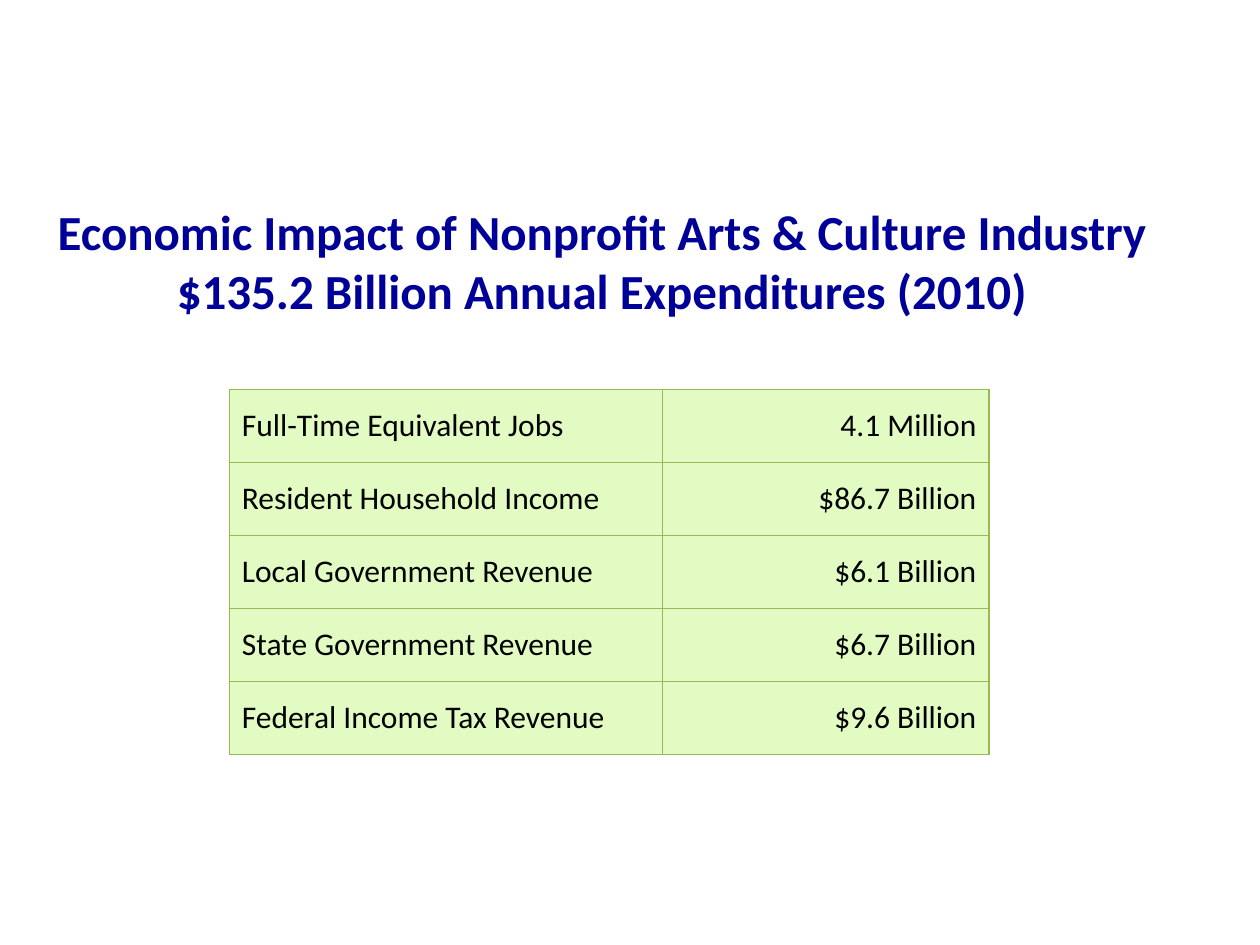
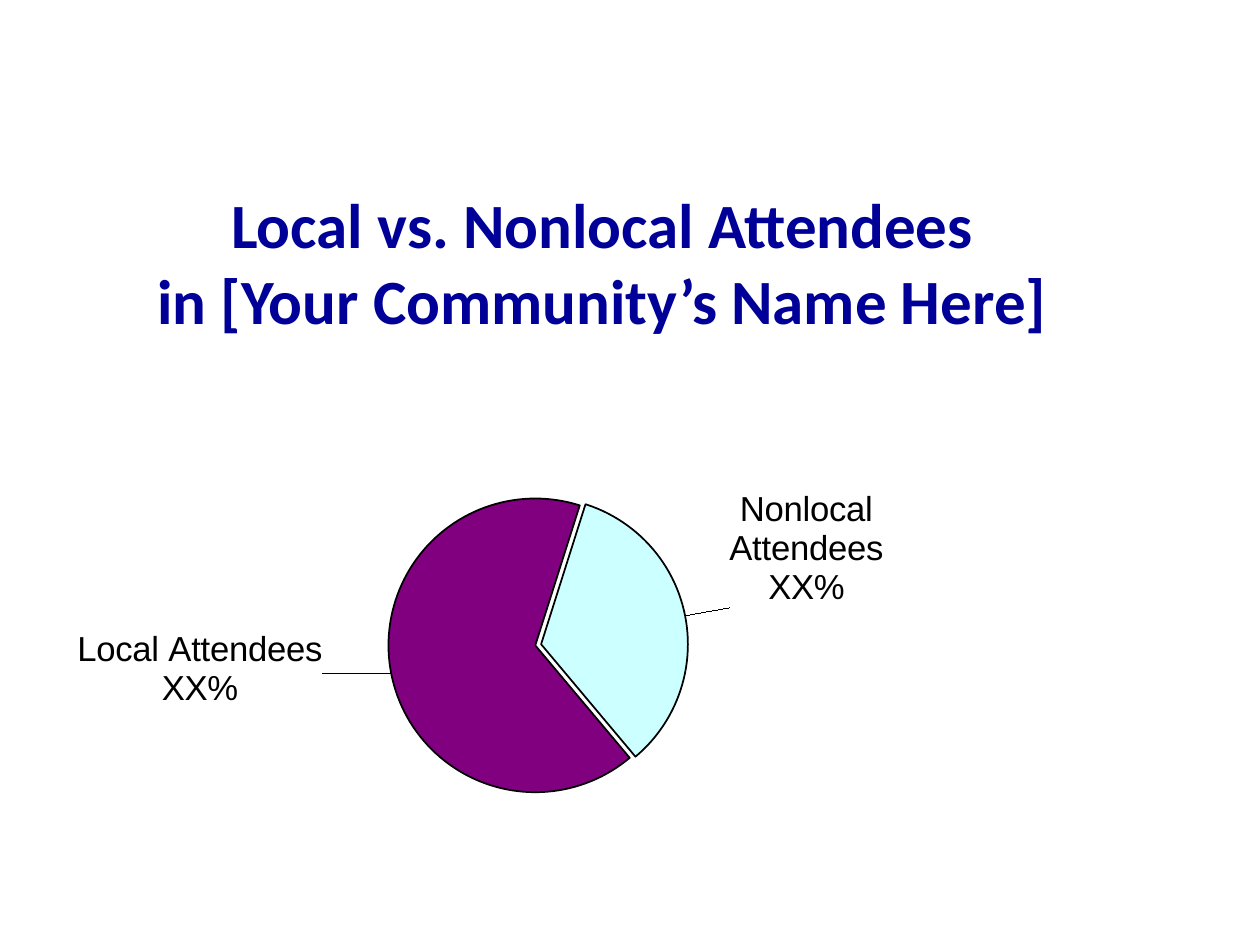
import pptx
import pptx.chart.data
import pptx.dml.color
import pptx.enum.chart
import pptx.enum.text
import pptx.oxml
import pptx.oxml.ns
import pptx.util

PX = 9144  # EMU per px, 100 px to the inch
COLORS = {
    "title": "000099",
    "text": "000000",
    "cell": "E2FBC2",
    "border": "98B955",
    "local": "800080",
    "nonlocal": "CCFFFF",
    "outline": "000000",
}
TITLE_FONT = "Calibri"
LABEL_FONT = "Arial"
ALIGN = pptx.enum.text.PP_ALIGN
MIDDLE = pptx.enum.text.MSO_ANCHOR.MIDDLE


def color(name):
    return pptx.dml.color.RGBColor.from_string(COLORS[name])


def element(xml):
    """Build one XML element; the first tag gets the namespaces."""
    tag, rest = xml[1:].split(">", 1)
    return pptx.oxml.parse_xml(f"<{tag} {pptx.oxml.ns.nsdecls('a', 'c')}>{rest}")


def manual_layout(**settings):
    parts = "".join(f'<c:{key} val="{value}"/>' for key, value in settings.items())
    return element(f"<c:layout><c:manualLayout>{parts}</c:manualLayout></c:layout>")


class SlideBuilder:
    def __init__(self, deck):
        self.deck = deck
        self.slide = None

    def new_slide(self):
        self.slide = self.deck.slides.add_slide(self.deck.slide_layouts[6])

    def frame(self, *lengths):
        return [length * PX for length in lengths]

    def style(self, frame, font, size, color_name, align, bold=False):
        for para in frame.paragraphs:
            para.alignment = align
            for span in para.runs:
                span.font.name = font
                span.font.size = pptx.util.Pt(size)
                span.font.bold = bold
                span.font.color.rgb = color(color_name)

    def title(self, text, left, top, width, height, size):
        box = self.slide.shapes.add_textbox(*self.frame(left, top, width, height))
        frame = box.text_frame
        frame.word_wrap = True
        frame.vertical_anchor = MIDDLE
        frame.text = text
        self.style(frame, TITLE_FONT, size, "title", ALIGN.CENTER, bold=True)

    def cell_borders(self, cell):
        properties = cell._tc.get_or_add_tcPr()
        for index, side in enumerate(("lnL", "lnR", "lnT", "lnB")):
            properties.insert(index, element(
                f"<a:{side}><a:solidFill><a:srgbClr val=\"{COLORS['border']}\"/>"
                f"</a:solidFill></a:{side}>"))
            properties[index].set("w", str(pptx.util.Pt(0.75)))

    def table(self, rows, left, top, column_widths, row_height):
        area = self.frame(left, top, sum(column_widths), row_height * len(rows))
        table = self.slide.shapes.add_table(len(rows), len(column_widths), *area).table
        table.first_row = False
        table.horz_banding = False
        for column, width in zip(table.columns, column_widths):
            column.width = width * PX
        for row, values in zip(table.rows, rows):
            row.height = row_height * PX
            for cell, text, align in zip(row.cells, values, (ALIGN.LEFT, ALIGN.RIGHT)):
                cell.text = text
                cell.vertical_anchor = MIDDLE
                cell.fill.solid()
                cell.fill.fore_color.rgb = color("cell")
                self.cell_borders(cell)
                self.style(cell.text_frame, TITLE_FONT, 18, "text", align)

    def pie(self, slices, left, top, width, height, start, explosion, plot_area):
        data = pptx.chart.data.CategoryChartData()
        data.categories = [str(number + 1) for number in range(len(slices))]
        data.add_series("Series 1", [value for value, *_ in slices])
        chart = self.slide.shapes.add_chart(
            pptx.enum.chart.XL_CHART_TYPE.PIE,
            *self.frame(left, top, width, height), data).chart
        chart.has_title = False
        chart.has_legend = False
        chart.font.name = LABEL_FONT
        chart.font.size = pptx.util.Pt(19.8)
        chart.font.color.rgb = color("text")
        plot = chart.plots[0]
        plot.vary_by_categories = True
        series = plot.series[0]

        # Slices with their labels
        for index, (_, fill, text, shift_x, shift_y) in enumerate(slices):
            point = series.points[index]
            point.format.fill.solid()
            point.format.fill.fore_color.rgb = color(fill)
            point.format.line.color.rgb = color("outline")
            point.format.line.width = pptx.util.Pt(1)
            label = point.data_label
            label.text_frame.text = text
            self.style(label.text_frame, LABEL_FONT, 19.8, "text", ALIGN.CENTER)
            label.position = pptx.enum.chart.XL_LABEL_POSITION.OUTSIDE_END
            label_xml = chart._chartSpace.xpath(".//c:dLbl")[index]
            label_xml.insert(1, manual_layout(x=shift_x, y=shift_y))

        # Explosion, start angle and plot area
        series.format.line.color.rgb = color("outline")
        series._element.find(pptx.oxml.ns.qn("c:spPr")).addnext(
            element(f'<c:explosion></c:explosion>'))
        series._element.find(pptx.oxml.ns.qn("c:explosion")).set("val", str(explosion))
        pie_xml = chart._chartSpace.xpath(".//c:pieChart")[0]
        for angle in pie_xml.xpath("c:firstSliceAng"):
            pie_xml.remove(angle)
        pie_xml.append(element("<c:firstSliceAng></c:firstSliceAng>"))
        pie_xml[-1].set("val", str(start))
        area_xml = pie_xml.getparent()
        for layout in area_xml.xpath("c:layout"):
            area_xml.remove(layout)
        x, y, w, h = plot_area
        area_xml.insert(0, manual_layout(
            layoutTarget="inner", xMode="edge", yMode="edge", x=x, y=y, w=w, h=h))


def main():
    deck = pptx.Presentation()
    deck.slide_width = 1000 * PX
    deck.slide_height = 750 * PX
    builder = SlideBuilder(deck)

    # Economic impact
    builder.new_slide()
    builder.title("Economic Impact of Nonprofit Arts & Culture Industry\n"
                  "$135.2 Billion Annual Expenditures (2010)", 3, 144, 949, 125, 28)
    builder.table([
        ("Full-Time Equivalent Jobs", "4.1 Million"),
        ("Resident Household Income", "$86.7 Billion"),
        ("Local Government Revenue", "$6.1 Billion"),
        ("State Government Revenue", "$6.7 Billion"),
        ("Federal Income Tax Revenue", "$9.6 Billion"),
    ], 182, 309, (344, 259), 58)

    # Local and nonlocal attendees: value, fill, label, label shift
    builder.new_slide()
    builder.title("Local vs. Nonlocal Attendees\nin [Your Community’s Name Here]",
                  0, 145, 956, 125, 36)
    builder.pie([
        (66, "local", "Local Attendees\nXX%", -0.05, -0.07),
        (34, "nonlocal", "Nonlocal\nAttendees\nXX%", 0.03, -0.01),
    ], -24, 274, 981, 517, start=140, explosion=2, plot_area=(0.33, 0.23, 0.26, 0.46))

    deck.save("out.pptx")


if __name__ == "__main__":
    main()
